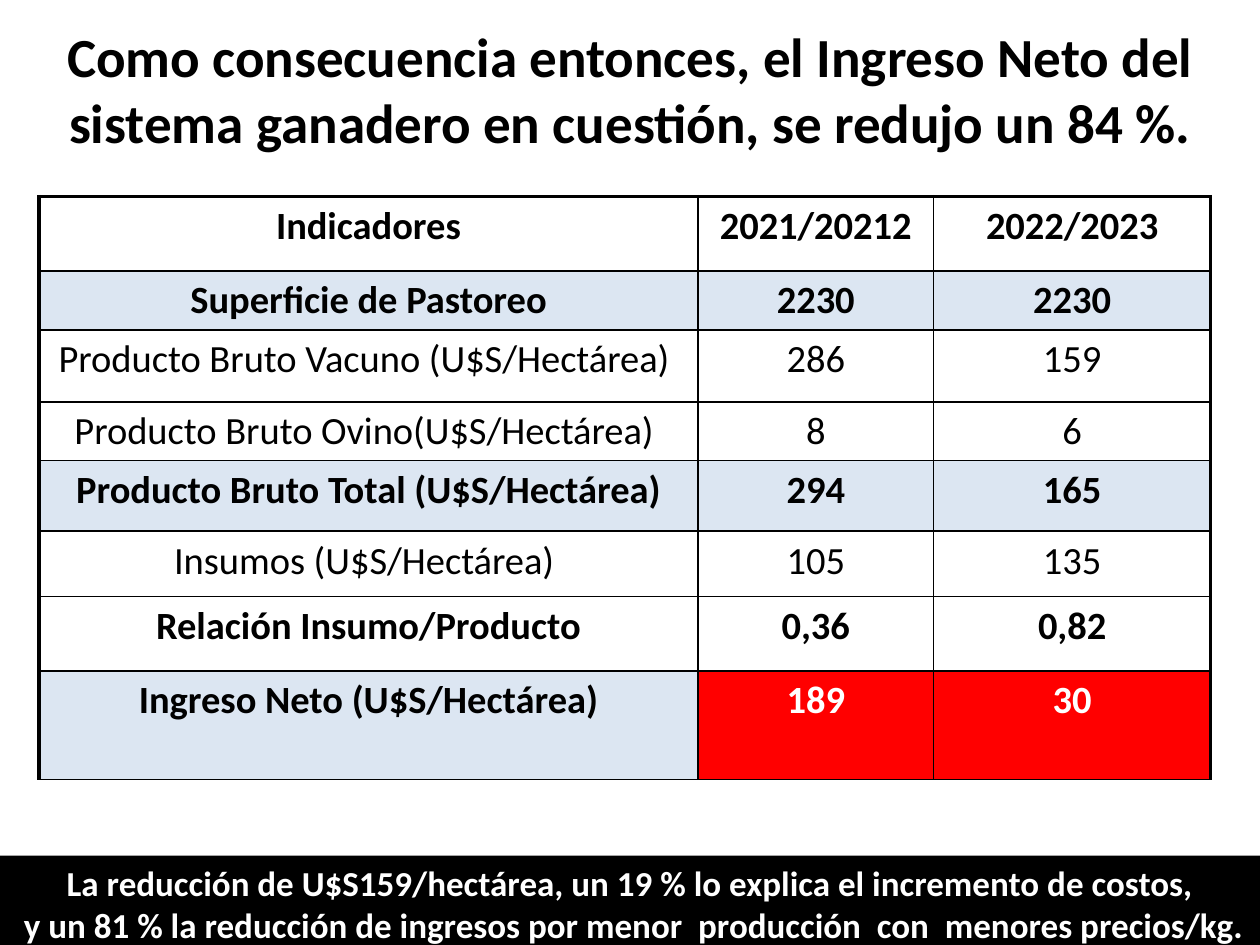
from pptx import Presentation
from pptx.dml.color import RGBColor
from pptx.enum.shapes import MSO_SHAPE as SHAPE
from pptx.enum.text import MSO_ANCHOR as ANCHOR, PP_ALIGN as ALIGN
from pptx.oxml import parse_xml
from pptx.oxml.ns import nsdecls
from pptx.util import Inches, Pt

BLACK, WHITE, PALE, RED = "000000", "FFFFFF", "DCE6F2", "FF0000"
THIN, THICK = 1, 2.25

COL_WIDTHS = [5.23, 1.87, 2.2]
# height, bold, fill of the label, fill of the values, texts
ROWS = [
    (0.59, True, None, None, ("Indicadores", "2021/20212", "2022/2023")),
    (0.47, True, PALE, PALE, ("Superficie de Pastoreo", "2230", "2230")),
    (0.57, False, None, None, ("Producto Bruto Vacuno (U$S/Hectárea) ", "286", "159")),
    (0.45, False, None, None, ("Producto Bruto Ovino(U$S/Hectárea) ", "8", "6")),
    (0.56, True, PALE, PALE, ("Producto Bruto Total (U$S/Hectárea)", "294", "165")),
    (0.52, False, None, None, ("Insumos (U$S/Hectárea) ", "105", "135")),
    (0.59, True, None, None, ("Relación Insumo/Producto", "0,36", "0,82")),
    (0.86, True, PALE, RED, ("Ingreso Neto (U$S/Hectárea)", "189", "30")),
]


def rgb(value):
    return RGBColor.from_string(value)


def write(tf, text, size=22, color=BLACK, bold=True, font="Calibri"):
    """Fill a text frame with centred text, one paragraph a line."""
    for i, line in enumerate(text.split("\n")):
        p = tf.paragraphs[0] if i == 0 else tf.add_paragraph()
        p.alignment = ALIGN.CENTER
        r = p.add_run()
        r.text = line
        r.font.name, r.font.size, r.font.bold = font, Pt(size), bold
        r.font.color.rgb = rgb(color)


def set_borders(cell, **widths):
    """Draw the cell's edges; they must precede its fill in the XML."""
    tc_pr = cell._tc.get_or_add_tcPr()
    for i, (edge, width) in enumerate(widths.items()):
        tc_pr.insert(i, parse_xml(
            f'<a:{edge} {nsdecls("a")} w="{Pt(width)}"><a:solidFill>'
            f'<a:srgbClr val="{BLACK}"/></a:solidFill></a:{edge}>'))


class SlideBuilder:
    def __init__(self, s):
        self.s = s

    def title(self, x, y, w, h, text, **style):
        tf = self.s.shapes.add_textbox(Inches(x), Inches(y), Inches(w), Inches(h)).text_frame
        tf.word_wrap = True
        tf.vertical_anchor = ANCHOR.MIDDLE
        write(tf, text, **style)

    def banner(self, x, y, w, h, text, fill, **style):
        sp = self.s.shapes.add_shape(SHAPE.RECTANGLE, Inches(x), Inches(y), Inches(w), Inches(h))
        sp.shadow.inherit = False
        sp.fill.solid()
        sp.fill.fore_color.rgb = rgb(fill)
        sp.line.fill.background()
        tf = sp.text_frame
        tf.word_wrap = True
        tf.vertical_anchor = ANCHOR.TOP
        write(tf, text, **style)

    def table(self, x, y, col_widths, rows):
        w, h = sum(col_widths), sum(row[0] for row in rows)
        table = self.s.shapes.add_table(len(rows), len(col_widths), Inches(x), Inches(y),
                                        Inches(w), Inches(h)).table
        table.first_row = table.horz_banding = False
        for column, width in zip(table.columns, col_widths):
            column.width = Inches(width)
        last = len(col_widths) - 1
        for i, (height, bold, label_fill, value_fill, texts) in enumerate(rows):
            table.rows[i].height = Inches(height)
            for j, text in enumerate(texts):
                cell = table.cell(i, j)
                fill = value_fill if j else label_fill
                if fill:
                    cell.fill.solid()
                    cell.fill.fore_color.rgb = rgb(fill)
                else:
                    cell.fill.background()
                set_borders(cell, lnL=THIN if j else THICK, lnR=THICK if j == last else THIN,
                            lnT=THIN if i else THICK, lnB=THIN)
                write(cell.text_frame, text, bold=bold, color=WHITE if fill == RED else BLACK)


def main():
    prs = Presentation()
    prs.slide_width, prs.slide_height = Inches(10), Inches(7.5)
    slide = SlideBuilder(prs.slides.add_slide(prs.slide_layouts[6]))
    slide.title(0, 0, 10, 1.41, "Como consecuencia entonces, el Ingreso Neto del sistema "
                "ganadero en cuestión, se redujo un 84 %.", size=31.5)
    slide.table(0.31, 1.56, COL_WIDTHS, ROWS)
    slide.banner(0, 6.79, 10, 0.77,
                 "La reducción de U$S159/hectárea, un 19 % lo explica el incremento de costos,\n"
                 " y un 81 % la reducción de ingresos por menor  producción  con  menores precios/kg.",
                 fill=BLACK, size=20, color=WHITE)
    prs.save("out.pptx")


if __name__ == "__main__":
    main()
